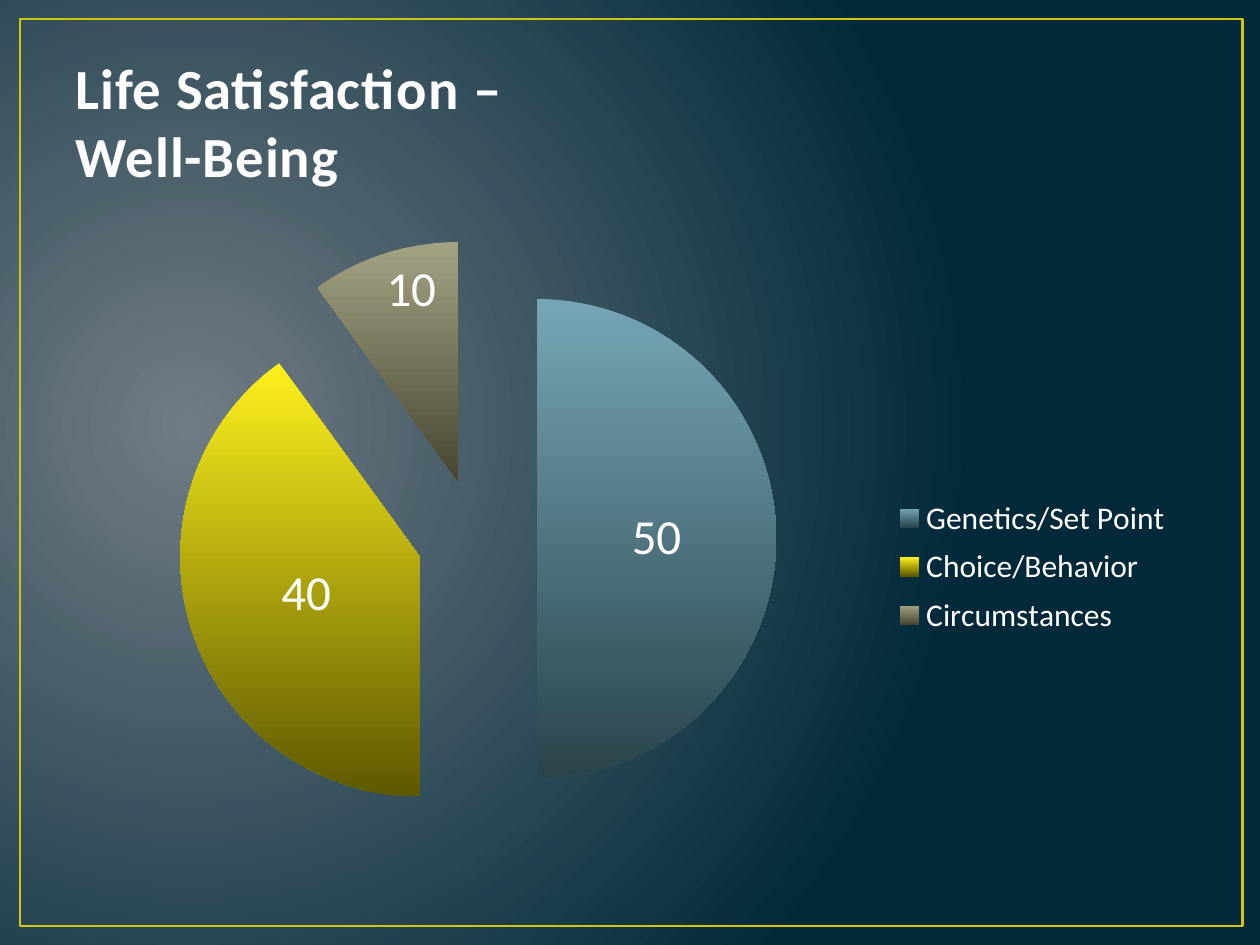
from lxml import etree
from pptx import Presentation
from pptx import util as u
from pptx.chart import data
from pptx.dml.color import RGBColor
from pptx.enum import chart as ch, shapes, text
from pptx.oxml import ns

WHITE = RGBColor(0xFF, 0xFF, 0xFF)
TITLE_WHITE = RGBColor(0xFE, 0xFE, 0xFE)
GLOW = RGBColor(0x71, 0x7C, 0x84)
NAVY = RGBColor(0x01, 0x29, 0x3A)
YELLOW = RGBColor(0xCF, 0xC6, 0x0D)
FONT = "Calibri"
SLICES = [
    ("Genetics/Set Point", 50, RGBColor(0x75, 0xA6, 0xB6), RGBColor(0x2A, 0x44, 0x4B)),
    ("Choice/Behavior", 40, RGBColor(0xFD, 0xF1, 0x1C), RGBColor(0x5E, 0x58, 0x00)),
    ("Circumstances", 10, RGBColor(0xA3, 0xA2, 0x83), RGBColor(0x48, 0x45, 0x32)),
]


def set_font(font, size, color, bold=False):
    """Give a font its face, size, colour and weight."""
    font.name, font.size, font.bold = FONT, u.Pt(size), bold
    font.color.rgb = color


def write_text(frame, words, size, color, bold=False, spacing=0,
               align=text.PP_ALIGN.LEFT, anchor=text.MSO_ANCHOR.BOTTOM):
    """Write formatted text, breaking lines at each newline."""
    frame.word_wrap = True
    frame.auto_size = text.MSO_AUTO_SIZE.NONE
    frame.vertical_anchor = anchor
    para = frame.paragraphs[0]
    para.alignment = align
    para.text = words.replace("\n", "\v")
    for span in para.runs:
        set_font(span.font, size, color, bold)
        span.font._element.set("spc", str(int(spacing * 100)))


def fill_gradient(fill, start, end):
    """Fill from the start colour at the top to the end colour below."""
    fill.gradient()
    fill.gradient_angle = 270
    for stop, color, position in zip(fill.gradient_stops, (start, end), (0, 1)):
        stop.color.rgb, stop.position = color, position


def paint_background(page):
    """Paint a radial glow left of centre."""
    fill_gradient(page.background.fill, GLOW, NAVY)
    linear = page.element.find(".//" + ns.qn("a:lin"))
    radial = etree.Element(ns.qn("a:path"), {"path": "circle"})
    etree.SubElement(radial, ns.qn("a:fillToRect"), l="15000", t="50000", r="85000", b="60000")
    linear.getparent().replace(linear, radial)


def add_border(page, left, top, width, height):
    """Draw the thin frame around the page."""
    border = page.shapes.add_shape(shapes.MSO_SHAPE.RECTANGLE, *map(u.Pt, (left, top, width, height)))
    border.shadow.inherit = False
    border.fill.background()
    border.line.color.rgb, border.line.width = YELLOW, u.Pt(1.5)


def add_title(page, left, top, width, height):
    """Place the title in its placeholder."""
    title = page.shapes.title
    title.left, title.top, title.width, title.height = map(u.Pt, (left, top, width, height))
    write_text(title.text_frame, "Life Satisfaction –\nWell-Being",
               size=32.4, color=TITLE_WHITE, bold=True, spacing=0.5)


def set_layout(element, target, **fractions):
    """Fix a chart part at fractions of the chart area."""
    for old in element.findall(ns.qn("c:layout")):
        element.remove(old)
    layout = etree.Element(ns.qn("c:layout"))
    manual = etree.SubElement(layout, ns.qn("c:manualLayout"))
    if target:
        etree.SubElement(manual, ns.qn("c:layoutTarget"), val=target)
    for side in "xy":
        etree.SubElement(manual, ns.qn(f"c:{side}Mode"), val="edge")
    for name, value in fractions.items():
        etree.SubElement(manual, ns.qn(f"c:{name}"), val=str(value))
    return layout


def add_pie(page, left, top, width, height):
    """Place the exploded pie with its legend and labels."""
    content = data.CategoryChartData()
    content.categories = [name for name, *_ in SLICES]
    content.add_series("Series 1", [value for _, value, *_ in SLICES])
    chart = page.shapes.add_chart(
        ch.XL_CHART_TYPE.PIE, *map(u.Pt, (left, top, width, height)), content).chart
    set_font(chart.font, 18, WHITE)
    chart.has_title = False
    chart.has_legend = True
    legend = chart.legend
    legend.position, legend.include_in_layout = ch.XL_LEGEND_POSITION.RIGHT, False
    set_font(legend.font, 18, WHITE)
    legend_layout = set_layout(legend._element, None, x=0.73, y=0.43, w=0.25, h=0.25)
    legend._element.find(ns.qn("c:legendPos")).addnext(legend_layout)

    plot = chart.plots[0]
    plot.vary_by_categories = True
    area = plot._element.getparent()
    area.insert(0, set_layout(area, "inner", x=0.1, y=0.03, w=0.53, h=0.96))
    series = plot.series[0]
    for index, (_, _, light, dark) in enumerate(SLICES):
        fill_gradient(series.points[index].format.fill, light, dark)
    explosion = etree.Element(ns.qn("c:explosion"), val="25")
    series._element.find(ns.qn("c:dPt")).addprevious(explosion)

    labels = series.data_labels
    labels.show_value = True
    labels.number_format, labels.number_format_is_linked = "0", False
    labels.position = ch.XL_LABEL_POSITION.CENTER
    set_font(labels.font, 28, WHITE)
    narrow = series.points[len(SLICES) - 1].data_label
    set_font(narrow.font, 28, WHITE)
    narrow.position = ch.XL_LABEL_POSITION.INSIDE_END


def main():
    """Build and save the deck."""
    deck = Presentation()
    deck.slide_width, deck.slide_height = u.Pt(720), u.Pt(540)
    page = deck.slides.add_slide(deck.slide_layouts[5])
    paint_background(page)
    add_border(page, 11.5, 10.8, 698.4, 518.4)
    add_title(page, 36, 21.6, 648, 90)
    add_pie(page, 36, 126, 648, 356.4)
    deck.save("out.pptx")


if __name__ == "__main__":
    main()
